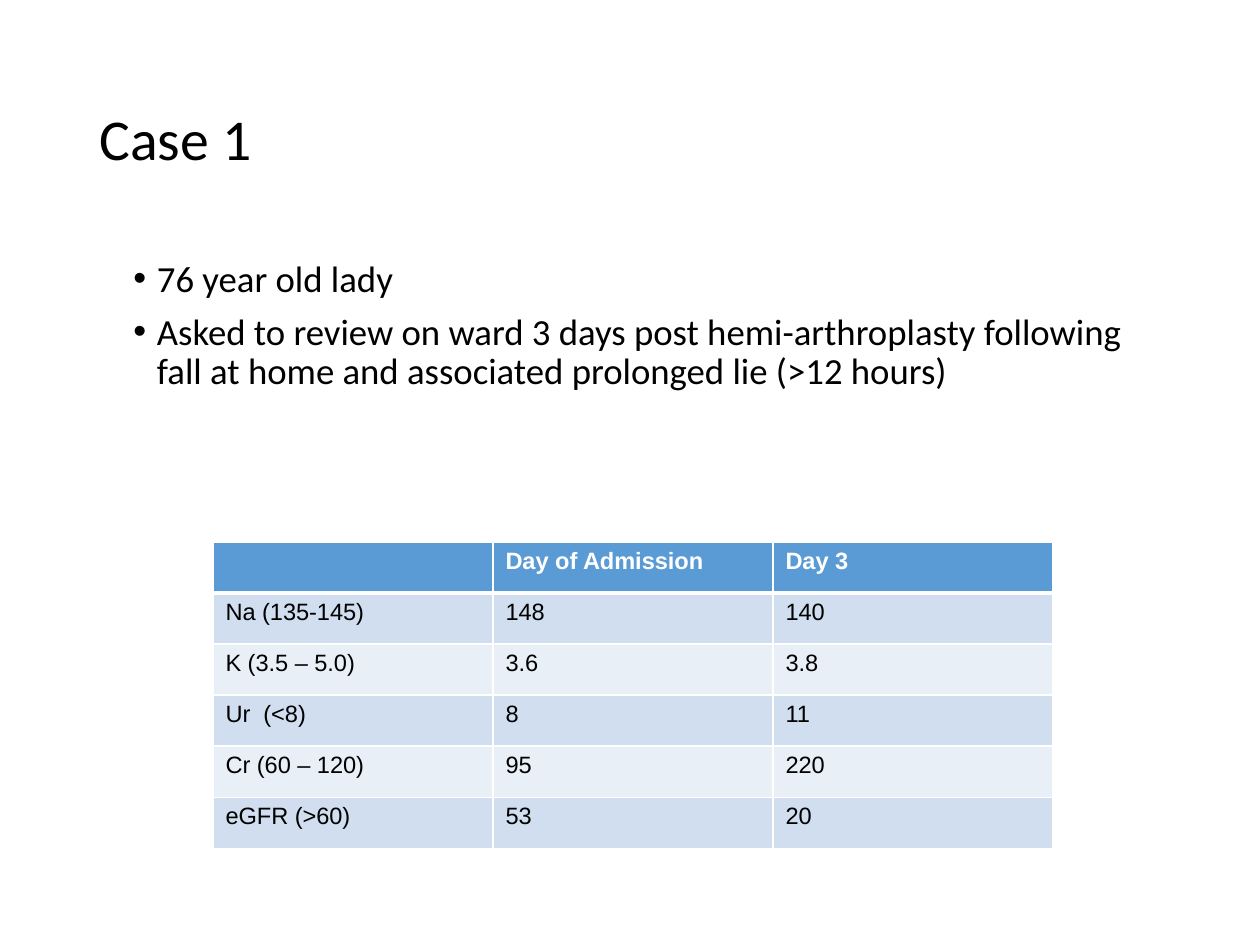
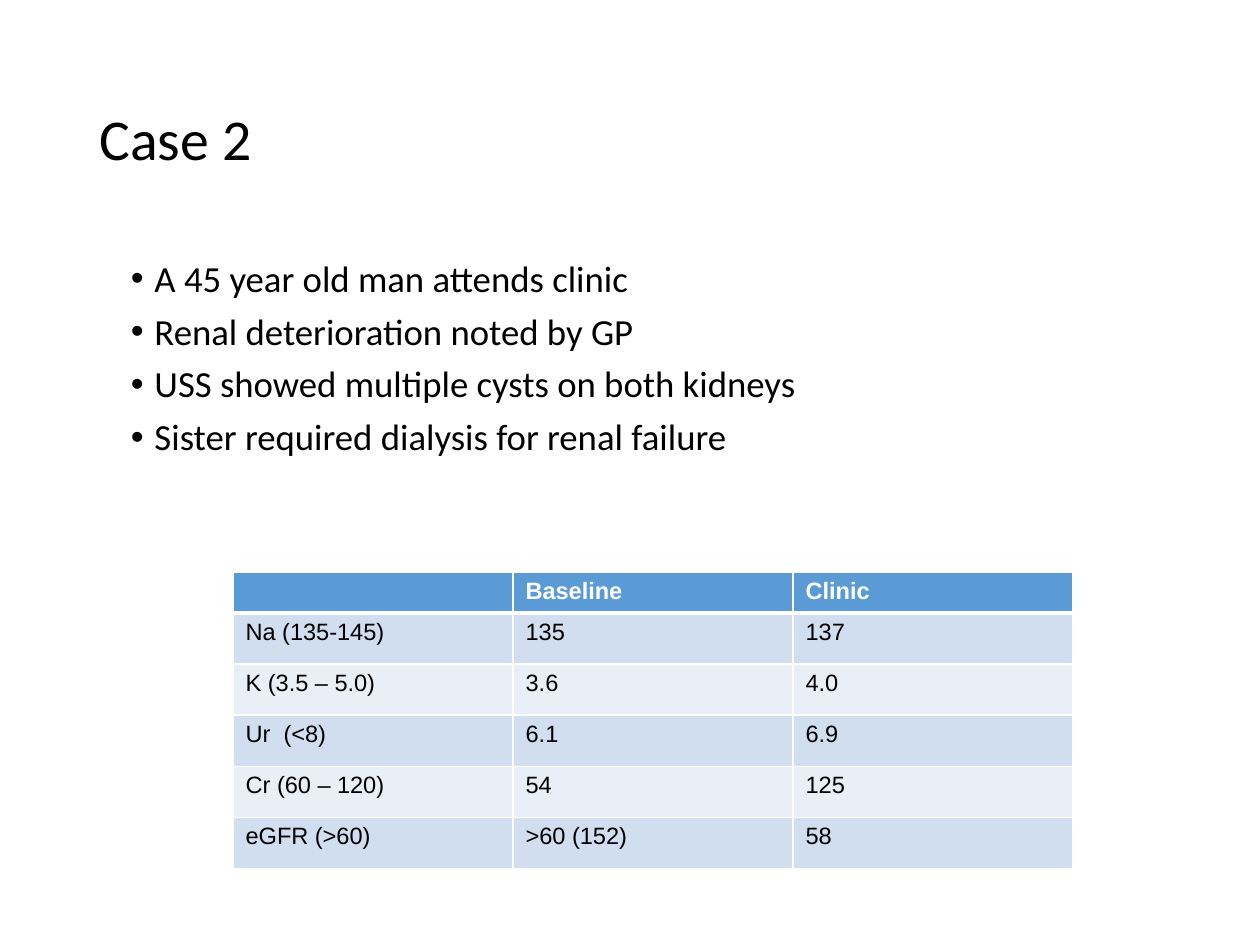
from lxml import etree
from pptx import Presentation
from pptx.dml.color import RGBColor
from pptx.enum import text
from pptx.oxml import ns
from pptx.util import Pt

TESTS = ["Na (135-145)", "K (3.5 – 5.0)", "Ur  (<8)", "Cr (60 – 120)", "eGFR (>60)"]
CASES = [
    {
        "title": "Case 1",
        "history": [
            "76 year old lady",
            "Asked to review on ward 3 days post hemi-arthroplasty following "
            "fall at home and associated prolonged lie (>12 hours)",
        ],
        "results": {
            "Day of Admission": ["148", "3.6", "8", "95", "53"],
            "Day 3": ["140", "3.8", "11", "220", "20"],
        },
        "history_left": 69.1,
        "table_at": (121.7, 309.6),
        "header_height": 29.2,
    },
    {
        "title": "Case 2",
        "history": [
            "A 45 year old man attends clinic",
            "Renal deterioration noted by GP",
            "USS showed multiple cysts on both kidneys",
            "Sister required dialysis for renal failure",
        ],
        "results": {
            "Baseline": ["135", "3.6", "6.1", "54", ">60 (152)"],
            "Clinic": ["137", "4.0", "6.9", "125", "58"],
        },
        "history_left": 67.7,
        "table_at": (133.2, 326.9),
        "header_height": 13.7,
    },
]

BLACK = RGBColor(0x00, 0x00, 0x00)
WHITE = RGBColor(0xFF, 0xFF, 0xFF)
HEADER_BLUE = RGBColor(0x5B, 0x9B, 0xD5)
BANDS = [RGBColor(0xD0, 0xDE, 0xEF), RGBColor(0xE9, 0xEF, 0xF7)]

TITLE_BOX = (49.7, 28.8, 620.6, 104.4)
HISTORY_TOP, HISTORY_WIDTH, HISTORY_HEIGHT = 145.4, 584.6, 278.6
BULLET_INDENT = 13.5
COLUMN_WIDTH, ROW_HEIGHT = 160, 29.2
CELL_SIZE = 13.5
THIN, THICK = 1, 3


def add_run(paragraph, words, name, size, color=BLACK, bold=False):
    run = paragraph.add_run()
    run.text = words
    run.font.name, run.font.size, run.font.bold = name, Pt(size), bold
    run.font.color.rgb = color


def add_bullet(paragraph):
    properties = paragraph._p.get_or_add_pPr()
    properties.set("marL", str(Pt(BULLET_INDENT)))
    properties.set("indent", str(-Pt(BULLET_INDENT)))
    etree.SubElement(properties, ns.qn("a:buFont"), typeface="Arial")
    etree.SubElement(properties, ns.qn("a:buChar"), char="•")


def add_text_box(slide, box, lines, size, anchor, bulleted=False):
    frame = slide.shapes.add_textbox(*map(Pt, box)).text_frame
    frame.word_wrap = True
    frame.vertical_anchor = anchor
    for index, line in enumerate(lines):
        paragraph = frame.add_paragraph() if index else frame.paragraphs[0]
        if bulleted:
            add_bullet(paragraph)
        paragraph.line_spacing = 0.9
        if index:
            paragraph.space_before = Pt(7.5)
        add_run(paragraph, line, "Calibri", size)


def set_borders(cell, top, bottom):
    properties = cell._tc.get_or_add_tcPr()
    for side, width in (("L", THIN), ("R", THIN), ("T", top), ("B", bottom)):
        line = etree.SubElement(properties, ns.qn(f"a:ln{side}"), w=str(Pt(width)))
        fill = etree.SubElement(line, ns.qn("a:solidFill"))
        etree.SubElement(fill, ns.qn("a:srgbClr"), val=str(WHITE))


def fill_cell(cell, words, row):
    header = row == 0
    set_borders(cell, THICK if row == 1 else THIN, THICK if header else THIN)
    cell.fill.solid()
    cell.fill.fore_color.rgb = HEADER_BLUE if header else BANDS[(row - 1) % 2]
    paragraph = cell.text_frame.paragraphs[0]
    if words:
        add_run(paragraph, words, "Arial", CELL_SIZE, WHITE if header else BLACK, header)
    else:
        # An empty cell would otherwise stretch its row to the default text size.
        etree.SubElement(paragraph._p, ns.qn("a:endParaRPr"), sz=str(int(CELL_SIZE * 100)))


def add_results_table(slide, case):
    rows = [["", *case["results"]], *zip(TESTS, *case["results"].values())]
    heights = [case["header_height"]] + [ROW_HEIGHT] * len(TESTS)
    columns = len(rows[0])
    size = (COLUMN_WIDTH * columns, sum(heights))
    table = slide.shapes.add_table(
        len(rows), columns, *map(Pt, case["table_at"] + size)).table
    for column in table.columns:
        column.width = Pt(COLUMN_WIDTH)
    for row, (values, height) in enumerate(zip(rows, heights)):
        table.rows[row].height = Pt(height)
        for column, words in enumerate(values):
            fill_cell(table.cell(row, column), words, row)


def add_case_slide(presentation, case):
    slide = presentation.slides.add_slide(presentation.slide_layouts[6])
    add_text_box(slide, TITLE_BOX, [case["title"]], 33, text.MSO_ANCHOR.MIDDLE)
    history_box = (case["history_left"], HISTORY_TOP, HISTORY_WIDTH, HISTORY_HEIGHT)
    add_text_box(slide, history_box, case["history"], 21, text.MSO_ANCHOR.TOP, bulleted=True)
    add_results_table(slide, case)


def main():
    presentation = Presentation()
    presentation.slide_width, presentation.slide_height = Pt(720), Pt(540)
    for case in CASES:
        add_case_slide(presentation, case)
    presentation.save("out.pptx")


if __name__ == "__main__":
    main()
